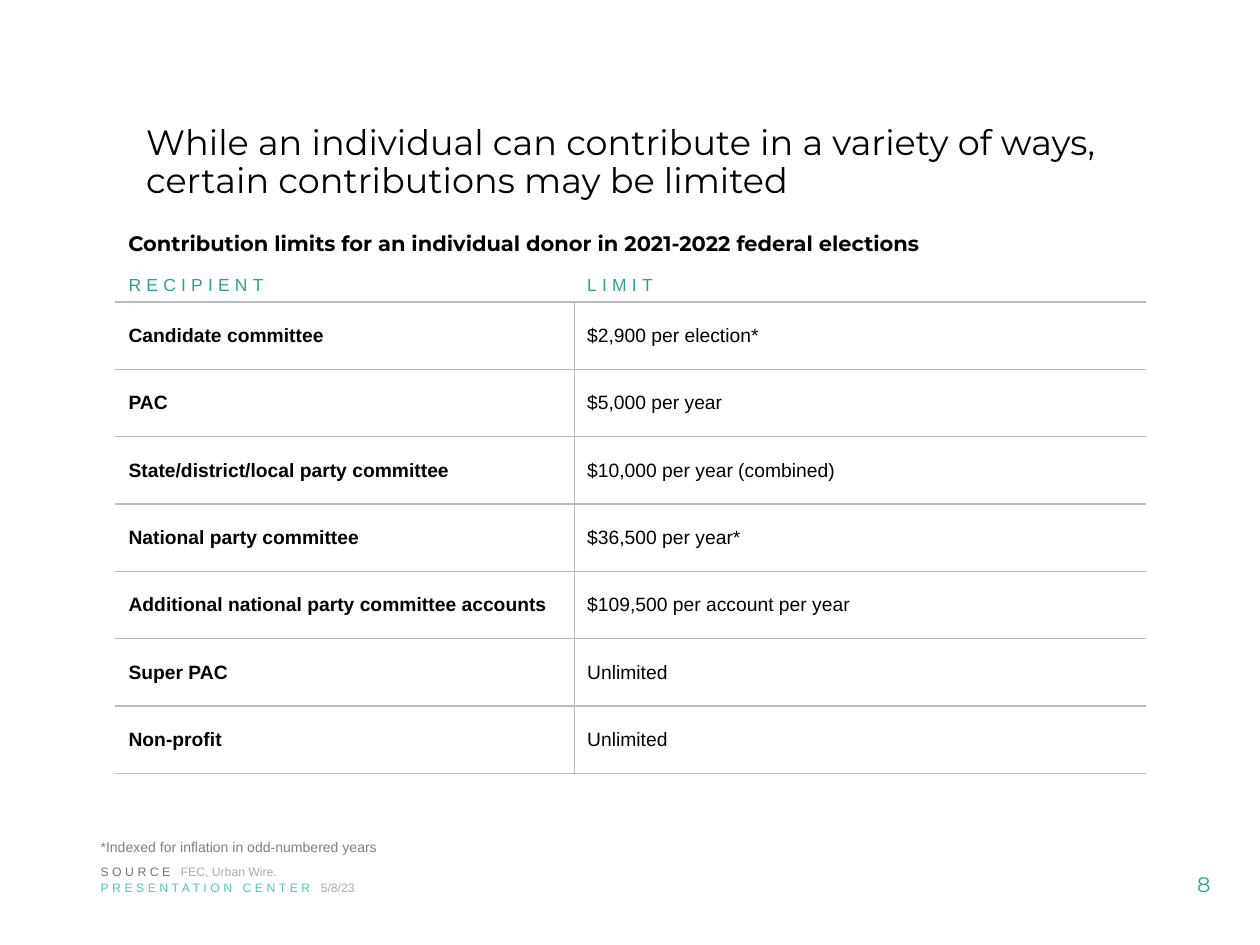
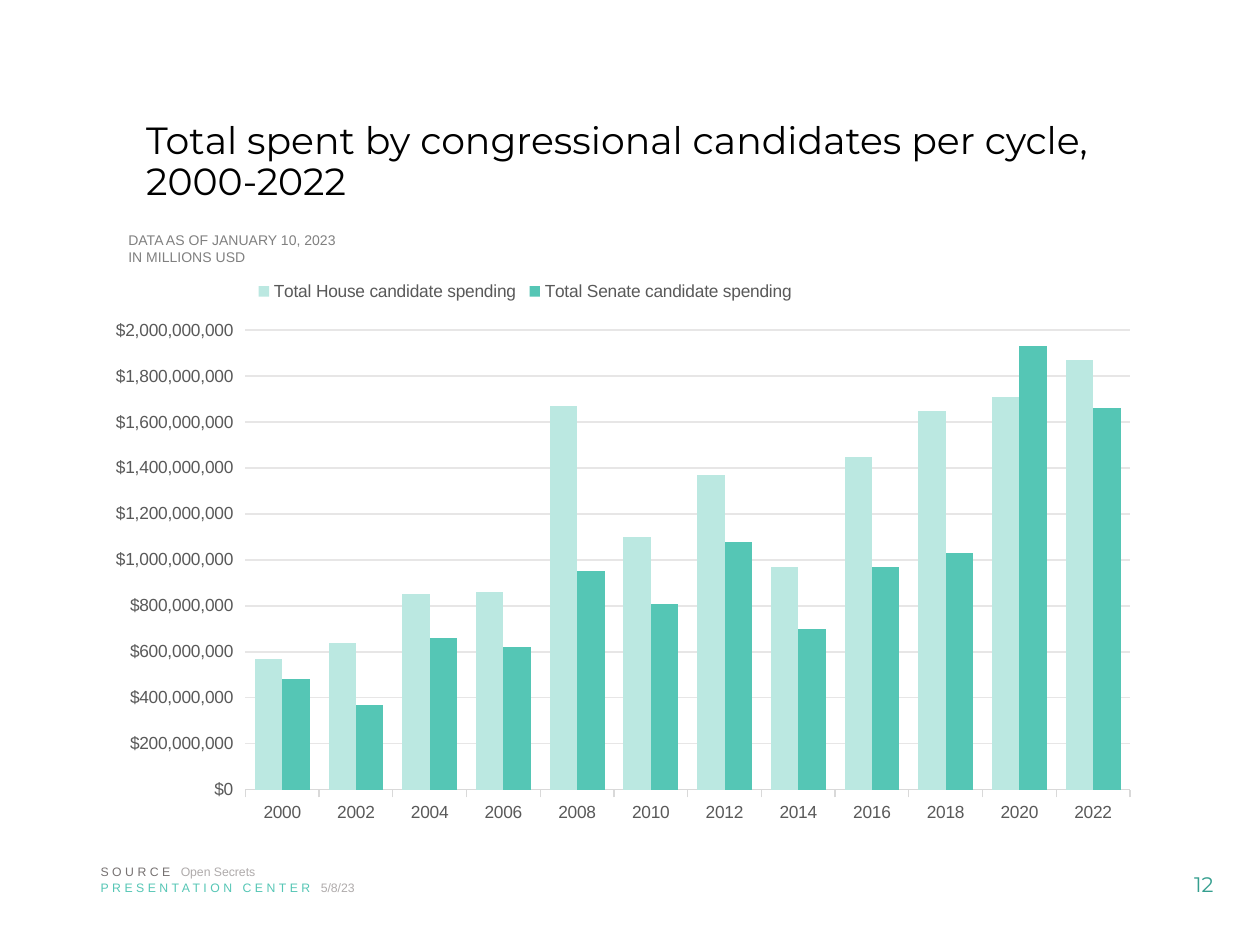
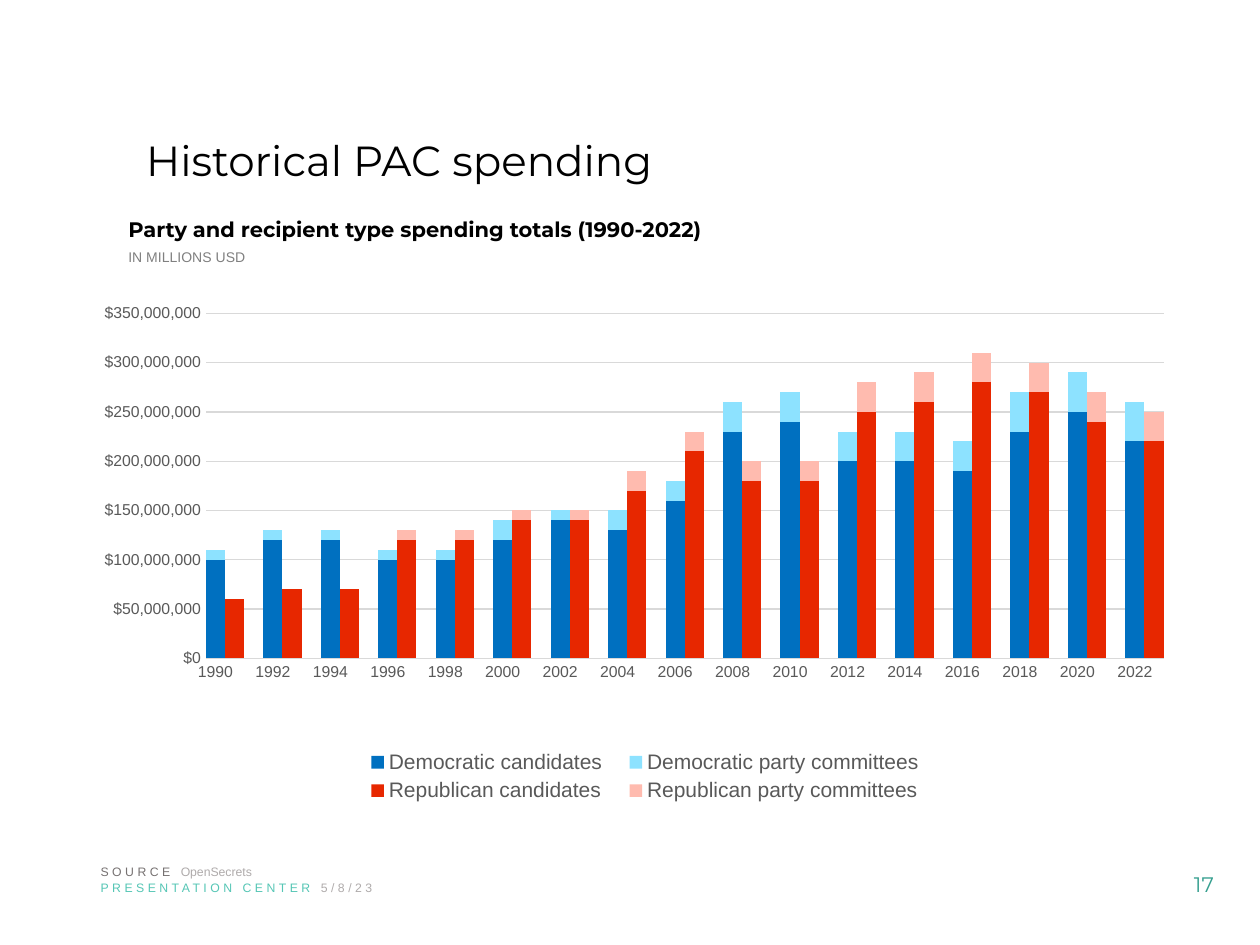
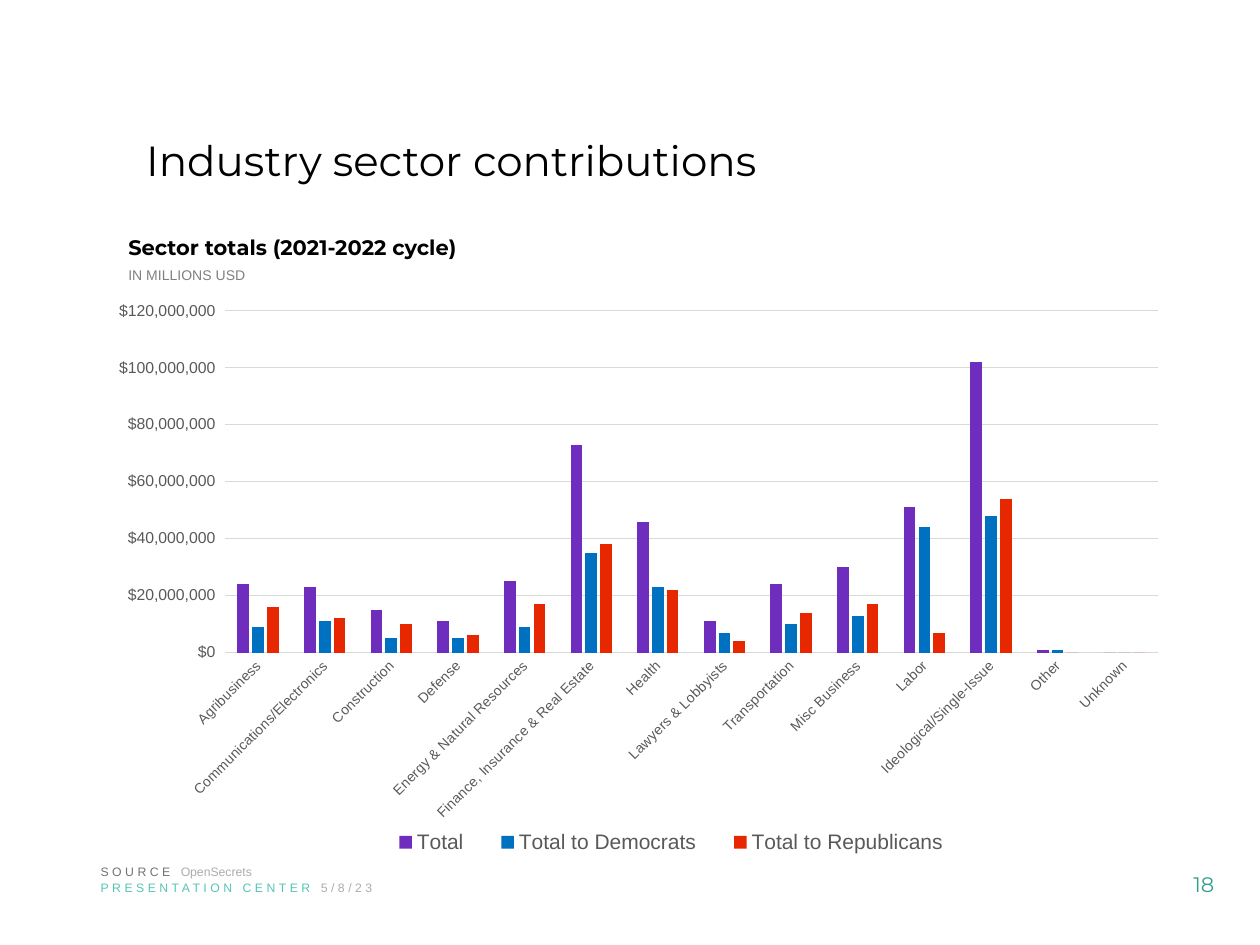
from lxml.etree import SubElement
from pptx import Presentation
from pptx.chart.data import CategoryChartData
from pptx.dml.color import RGBColor
from pptx.enum.chart import XL_CHART_TYPE as Kind, XL_LEGEND_POSITION as LegendPos, XL_TICK_MARK as Tick
from pptx.enum.text import MSO_ANCHOR as Anchor, MSO_AUTO_SIZE as AutoSize, PP_ALIGN as Align
from pptx.oxml import parse_xml
from pptx.oxml.ns import nsdecls, qn
from pptx.util import Inches, Pt

WIDTH, HEIGHT = Inches(10), Inches(7.5)
COLS, ROWS = 100, 75
HEAD_FONT, BODY_FONT = "Montserrat", "Arial"

BLACK = RGBColor(0x00, 0x00, 0x00)
WHITE = RGBColor(0xFF, 0xFF, 0xFF)
DARK_TEAL = RGBColor(0x35, 0x9F, 0x8F)
TEAL = RGBColor(0x55, 0xC6, 0xB5)
PALE_TEAL = RGBColor(0xBB, 0xE8, 0xE1)
BLUE = RGBColor(0x00, 0x70, 0xC0)
PALE_BLUE = RGBColor(0x8D, 0xE2, 0xFF)
RED = RGBColor(0xE7, 0x27, 0x00)
PALE_RED = RGBColor(0xFF, 0xBB, 0xAF)
PURPLE = RGBColor(0x6F, 0x2D, 0xBE)
AXIS_TEXT = RGBColor(0x59, 0x59, 0x59)
NOTE_GRAY = RGBColor(0x80, 0x80, 0x80)
SOURCE_GRAY = RGBColor(0x76, 0x71, 0x71)
CREDIT_GRAY = RGBColor(0xAF, 0xAB, 0xAB)
RULE_GRAY = RGBColor(0xBA, 0xBB, 0xBA)
GRID_GRAY = RGBColor(0xD9, 0xD9, 0xD9)
GRID_LIGHT = RGBColor(0xE7, 0xE6, 0xE6)

MILLION = 10 ** 6
DOLLARS = '"$"#,##0'
RED_DOLLARS = r'"$"#,##0_);[Red]\("$"#,##0\)'
AUTO_TURN, DIAGONAL = "-60000000", "-2700000"

LIMITS = [
    ("RECIPIENT", "LIMIT"),
    ("Candidate committee", "$2,900 per election*"),
    ("PAC", "$5,000 per year"),
    ("State/district/local party committee", "$10,000 per year (combined)"),
    ("National party committee", "$36,500 per year*"),
    ("Additional national party committee accounts", "$109,500 per account per year"),
    ("Super PAC", "Unlimited"),
    ("Non-profit", "Unlimited"),
]

CONGRESS_YEARS = [str(y) for y in range(2000, 2023, 2)]
CONGRESS = [
    ("Total House candidate spending", PALE_TEAL,
     [570, 640, 850, 860, 1670, 1100, 1370, 970, 1450, 1650, 1710, 1870]),
    ("Total Senate candidate spending", TEAL,
     [480, 370, 660, 620, 950, 810, 1080, 700, 970, 1030, 1930, 1660]),
]

PAC_YEARS = [str(y) for y in range(1990, 2023, 2)]
DEMOCRATIC_SLOT, REPUBLICAN_SLOT = 0, 1
PAC = [
    ("Democratic candidates", BLUE, DEMOCRATIC_SLOT,
     [100, 120, 120, 100, 100, 120, 140, 130, 160, 230, 240, 200, 200, 190, 230, 250, 220]),
    ("Democratic party committees", PALE_BLUE, DEMOCRATIC_SLOT,
     [10, 10, 10, 10, 10, 20, 10, 20, 20, 30, 30, 30, 30, 30, 40, 40, 40]),
    ("Republican candidates", RED, REPUBLICAN_SLOT,
     [60, 70, 70, 120, 120, 140, 140, 170, 210, 180, 180, 250, 260, 280, 270, 240, 220]),
    ("Republican party committees", PALE_RED, REPUBLICAN_SLOT,
     [0, 0, 0, 10, 10, 10, 10, 20, 20, 20, 20, 30, 30, 30, 30, 30, 30]),
]

SECTORS = ["Agribusiness", "Communications/Electronics", "Construction", "Defense",
           "Energy & Natural Resources", "Finance, Insurance & Real Estate", "Health",
           "Lawyers & Lobbyists", "Transportation", "Misc Business", "Labor",
           "Ideological/Single-Issue", "Other", "Unknown"]
SECTOR_TOTALS = [
    ("Total", PURPLE, [24, 23, 15, 11, 25, 73, 46, 11, 24, 30, 51, 102, 1, 0]),
    ("Total to Democrats", BLUE, [9, 11, 5, 5, 9, 35, 23, 7, 10, 13, 44, 48, 1, 0]),
    ("Total to Republicans", RED, [16, 12, 10, 6, 17, 38, 22, 4, 14, 17, 7, 54, 0, 0]),
]


def area(col, row, cols, rows):
    return (round(WIDTH * col / COLS), round(HEIGHT * row / ROWS),
            round(WIDTH * cols / COLS), round(HEIGHT * rows / ROWS))


def style(r, size, color, font=BODY_FONT, bold=False, spacing=0):
    r.font.size, r.font.name, r.font.bold = Pt(size), font, bold
    r.font.color.rgb = color
    if spacing:
        r.font._element.set("spc", str(spacing * 100))


def add_text(s, box, lines, size, color, font=BODY_FONT, bold=False):
    tf = s.shapes.add_textbox(*area(*box)).text_frame
    tf.word_wrap = True
    tf.text = "\n".join(lines)
    for p in tf.paragraphs:
        style(p.runs[0], size, color, font, bold)
    return tf


def add_heading(s, row, text):
    add_text(s, (9.2, row, 81.7, 3), [text], 12, BLACK, HEAD_FONT, True)


def add_note(s, row, *lines):
    add_text(s, (9.2, row, 30, 2.4), lines, 8, NOTE_GRAY)


def add_credit(s, row, label, color, detail, spacing=0):
    tf = add_text(s, (7, row, 48.5, 2.2), [label + " "], 7, color)
    p = tf.paragraphs[0]
    style(p.runs[0], 7, color, spacing=2)
    r = p.add_run()
    r.text = detail
    style(r, 7, CREDIT_GRAY, spacing=spacing)


def new_slide(prs, title, size, number, source, date_spacing=0):
    s = prs.slides.add_slide(prs.slide_layouts[5])
    sp = s.shapes.title
    sp.left, sp.top, sp.width, sp.height = area(10.6, 9, 80.3, 7.9)
    tf = sp.text_frame
    tf.text = title
    tf.word_wrap, tf.auto_size = True, AutoSize.NONE
    tf.vertical_anchor = Anchor.MIDDLE
    p = tf.paragraphs[0]
    p.alignment, p.line_spacing = Align.LEFT, 0.9
    style(p.runs[0], size, BLACK, HEAD_FONT)
    tf = add_text(s, (91.1, 68.2, 8.9, 4), [str(number)], 12, DARK_TEAL, HEAD_FONT)
    tf.vertical_anchor = Anchor.MIDDLE
    tf.paragraphs[0].alignment = Align.CENTER
    add_credit(s, 68.1, "SOURCE", SOURCE_GRAY, source)
    add_credit(s, 69.4, "PRESENTATION CENTER", TEAL, "5/8/23", date_spacing)
    return s


def set_borders(cell, left, right, top, bottom):
    tc_pr = cell._tc.get_or_add_tcPr()
    for side, color in zip("LRTB", (left, right, top, bottom)):
        ln = SubElement(tc_pr, qn("a:ln" + side), w=str(Pt(1)))
        fill = SubElement(ln, qn("a:solidFill"))
        SubElement(fill, qn("a:srgbClr"), val=str(color))


def add_limits_table(s, box):
    x, y, cx, cy = area(*box)
    table = s.shapes.add_table(len(LIMITS), 2, x, y, cx, cy).table
    table.first_row = table.horz_banding = False
    table.columns[0].width = round(WIDTH * 0.364)
    table.columns[1].width = cx - table.columns[0].width
    header = Inches(0.25)
    for i, texts in enumerate(LIMITS):
        table.rows[i].height = (cy - header) // (len(LIMITS) - 1) if i else header
        for j, text in enumerate(texts):
            cell = table.cell(i, j)
            cell.text = text
            cell.vertical_anchor = Anchor.MIDDLE
            r = cell.text_frame.paragraphs[0].runs[0]
            if i:
                style(r, 11, BLACK, bold=j == 0)
                set_borders(cell, RULE_GRAY if j else WHITE, WHITE if j else RULE_GRAY,
                            RULE_GRAY, RULE_GRAY)
            else:
                style(r, 10, DARK_TEAL, spacing=3)
                set_borders(cell, WHITE, WHITE, WHITE, RULE_GRAY)
            cell.fill.background()


def place(parent, index, x, y, w, h, inner=False):
    for old in parent.findall(qn("c:layout")):
        parent.remove(old)
    layout = parse_xml("<c:layout %s/>" % nsdecls("c"))
    manual = SubElement(layout, qn("c:manualLayout"))
    settings = [("layoutTarget", "inner")] if inner else []
    settings += [("xMode", "edge"), ("yMode", "edge"), ("x", x), ("y", y), ("w", w), ("h", h)]
    for tag, value in settings:
        SubElement(manual, qn("c:" + tag), val=str(value))
    parent.insert(index, layout)


def style_axis(axis, size, tick):
    axis.major_tick_mark, axis.minor_tick_mark = tick, Tick.NONE
    font = axis.tick_labels.font
    font.size, font.name, font.color.rgb = Pt(size), BODY_FONT, AXIS_TEXT


def add_columns(s, box, kind, cats, series, plot_area, legend_area, top, step, gap, overlap=0,
                tick=Tick.NONE, cat_size=9, val_size=9, legend_size=12, turn=AUTO_TURN,
                grid=GRID_GRAY, fmt=DOLLARS, legend_pos=LegendPos.BOTTOM):
    data = CategoryChartData(number_format=fmt)
    data.categories = cats
    for name, _, values in series:
        data.add_series(name, [v if v is None else v * MILLION for v in values])
    chart = s.shapes.add_chart(kind, *area(*box), data).chart
    chart.has_title = False
    chart.font.size, chart.font.name, chart.font.color.rgb = Pt(10), BODY_FONT, BLACK

    plot = chart.plots[0]
    plot.vary_by_categories = False
    plot.gap_width, plot.overlap = gap, overlap
    for ser, (_, color, _) in zip(plot.series, series):
        ser.format.fill.solid()
        ser.format.fill.fore_color.rgb = color
        ser.invert_if_negative = False

    cat_axis, val_axis = chart.category_axis, chart.value_axis
    style_axis(cat_axis, cat_size, tick)
    style_axis(val_axis, val_size, tick)
    cat_axis.format.line.color.rgb = GRID_GRAY
    cat_axis.format.line.width = Pt(0.75)
    val_axis.format.line.fill.background()
    val_axis.minimum_scale, val_axis.maximum_scale = 0, top * MILLION
    val_axis.major_unit = step * MILLION
    val_axis.tick_labels.number_format = fmt
    val_axis.tick_labels.number_format_is_linked = False
    val_axis.major_gridlines.format.line.color.rgb = grid
    val_axis.major_gridlines.format.line.width = Pt(0.75)

    chart.has_legend = True
    legend = chart.legend
    legend.position, legend.include_in_layout = legend_pos, False
    legend.font.size, legend.font.name = Pt(legend_size), BODY_FONT
    legend.font.color.rgb = AXIS_TEXT

    root = chart.element
    place(root.find(".//" + qn("c:plotArea")), 0, *plot_area, inner=True)
    place(root.find(".//" + qn("c:legend")), 1, *legend_area)
    body = root.find(".//" + "/".join(map(qn, ("c:catAx", "c:txPr", "a:bodyPr"))))
    body.set("rot", turn)
    body.set("vert", "horz")


def in_slot(values, slot, blank=None):
    spread = []
    for v in values:
        group = [blank] * 3
        group[slot] = v
        spread += group
    return spread[:-1]


def limits_slide(prs):
    s = new_slide(prs, "While an individual can contribute in a variety of ways, "
                  "certain contributions may be limited", 20, 8, "FEC, Urban Wire.")
    add_heading(s, 17.8, "Contribution limits for an individual donor in 2021-2022 federal elections")
    add_limits_table(s, (9.2, 21.3, 81.7, 39.9))
    tf = add_text(s, (7, 65.9, 85.5, 3), ["*Indexed for inflation in odd-numbered years"],
                  8, NOTE_GRAY)
    tf.paragraphs[0].line_spacing = 1.1


def congress_slide(prs):
    s = new_slide(prs, "Total spent by congressional candidates per cycle, 2000-2022",
                  21.6, 12, "Open Secrets")
    add_note(s, 17.9, "DATA AS OF JANUARY 10, 2023", "IN MILLIONS USD")
    add_columns(s, (9.2, 21.8, 81.7, 44.5), Kind.COLUMN_CLUSTERED, CONGRESS_YEARS, CONGRESS,
                (0.115, 0.099, 0.87, 0.82), (0.12, 0, 0.54, 0.06), 2000, 200, gap=69,
                tick=Tick.OUTSIDE, cat_size=10, val_size=10, legend_size=10, grid=GRID_LIGHT,
                legend_pos=LegendPos.RIGHT)


def pac_slide(prs):
    s = new_slide(prs, "Historical PAC spending", 24, 17, "OpenSecrets", 2)
    add_note(s, 19.2, "IN MILLIONS USD")
    add_heading(s, 16.7, "Party and recipient type spending totals (1990-2022)")
    series = [(name, color, in_slot(values, slot)) for name, color, slot, values in PAC]
    add_columns(s, (8.3, 18.3, 84.9, 49.8), Kind.COLUMN_STACKED, in_slot(PAC_YEARS, 0, ""),
                series, (0.094, 0.132, 0.896, 0.55), (0.23, 0.82, 0.55, 0.1), 350, 50,
                gap=0, overlap=100)


def sector_slide(prs):
    s = new_slide(prs, "Industry sector contributions", 24, 18, "OpenSecrets", 2)
    add_note(s, 20.7, "IN MILLIONS USD")
    add_heading(s, 18.1, "Sector totals (2021-2022 cycle)")
    add_columns(s, (7.8, 23.1, 85.8, 46.3), Kind.COLUMN_CLUSTERED, SECTORS, SECTOR_TOTALS,
                (0.117, 0.034, 0.863, 0.586), (0.25, 0.91, 0.56, 0.07), 120, 20,
                gap=219, overlap=-27, cat_size=8, turn=DIAGONAL, fmt=RED_DOLLARS)


def main():
    prs = Presentation()
    prs.slide_width, prs.slide_height = WIDTH, HEIGHT
    limits_slide(prs)
    congress_slide(prs)
    pac_slide(prs)
    sector_slide(prs)
    prs.save("out.pptx")


if __name__ == "__main__":
    main()
